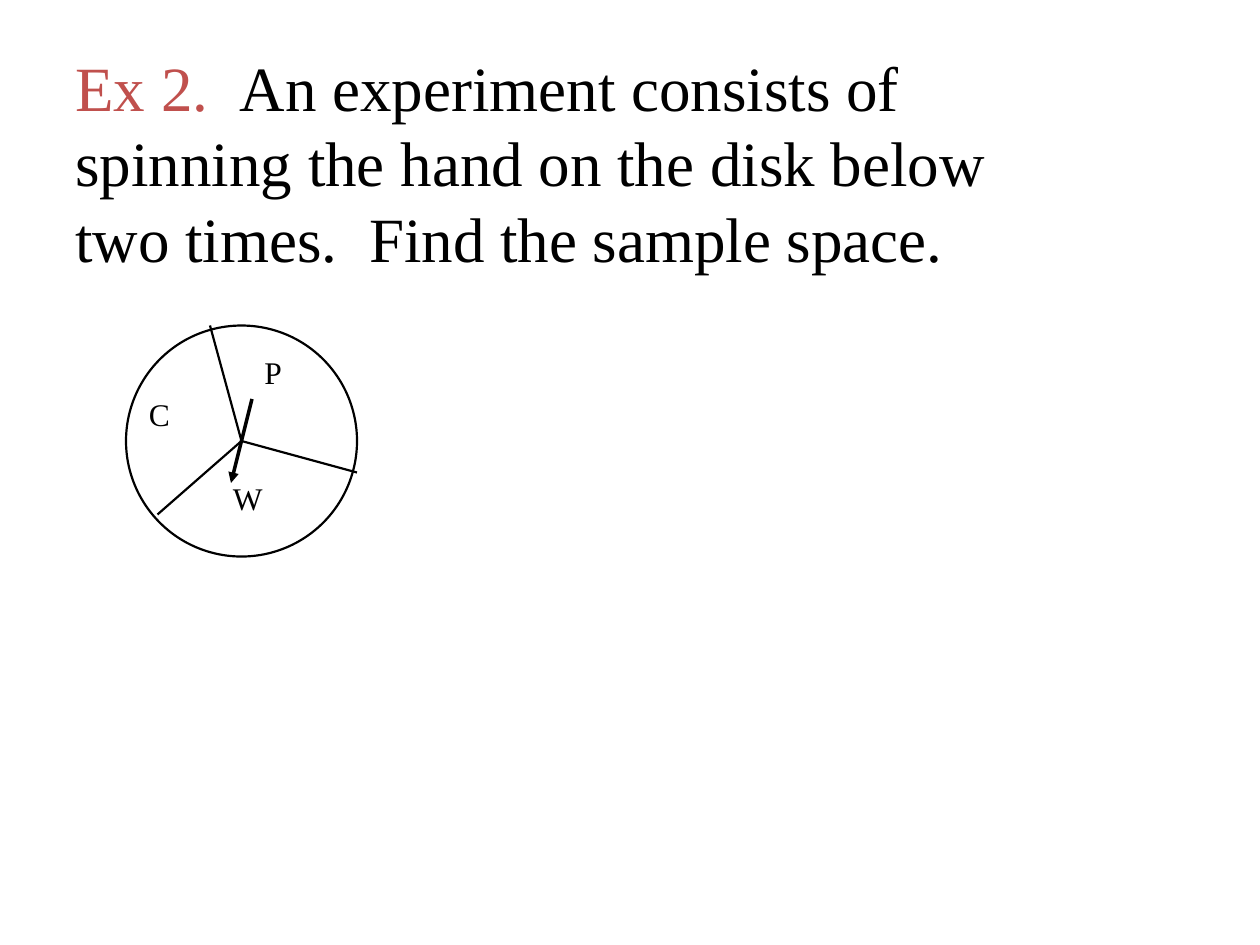
from typing import NamedTuple

from lxml import etree
from pptx import Presentation
from pptx.dml.color import RGBColor
from pptx.enum.shapes import MSO_CONNECTOR, MSO_SHAPE
from pptx.oxml.ns import qn
from pptx.util import Inches, Pt

STRAIGHT = MSO_CONNECTOR.STRAIGHT
OVAL = MSO_SHAPE.OVAL
FONT = "Times New Roman"
BLACK, RED = "000000", "C0504D"
CELLS_PER_INCH = 12  # grid of 120 columns by 90 rows


class Point(NamedTuple):
    column: float
    row: float


class Span(NamedTuple):
    text: str
    color: str = BLACK


class Label(NamedTuple):
    text: str
    corner: Point


CENTER = Point(23, 42)
RADIUS = 11
DIVIDER_ENDS = [Point(15, 49), Point(20, 31), Point(34, 45)]
HAND = (Point(24, 38), Point(22, 46))
LABELS = [Label("C", Point(13, 37)), Label("W", Point(21, 45)), Label("P", Point(24, 33))]
QUESTION = [
    Span("Ex 2.  ", RED),
    Span("An experiment consists of spinning the hand on the disk below "
         "two times.  Find the sample space."),
]


def cells(count: float) -> int:
    return Inches(count / CELLS_PER_INCH)


def rgb(color: str) -> RGBColor:
    return RGBColor.from_string(color)


def add_text(page, corner: Point, width: float, height: float,
             spans: list[Span], size: float) -> None:
    box = page.shapes.add_textbox(*map(cells, (*corner, width, height)))
    box.text_frame.word_wrap = True
    para = box.text_frame.paragraphs[0]
    para.font.name, para.font.size = FONT, Pt(size)
    for span in spans:
        run = para.add_run()
        run.text = span.text
        run.font.color.rgb = rgb(span.color)


def add_line(page, start: Point, end: Point, width: float, arrow: bool = False) -> None:
    connector = page.shapes.add_connector(STRAIGHT, *map(cells, (*start, *end)))
    connector.line.color.rgb = rgb(BLACK)
    connector.line.width = Pt(width)
    properties = connector._element.spPr
    if arrow:
        etree.SubElement(properties.find(qn("a:ln")), qn("a:tailEnd"), type="triangle")
    etree.SubElement(properties, qn("a:effectLst"))


def add_disk(page, center: Point, radius: float) -> None:
    disk = page.shapes.add_shape(OVAL, cells(center.column - radius), cells(center.row - radius),
                                 cells(2 * radius), cells(2 * radius))
    disk.shadow.inherit = False
    disk.fill.background()
    disk.line.color.rgb = rgb(BLACK)
    disk.line.width = Pt(1.25)


def main() -> None:
    deck = Presentation()
    deck.slide_width, deck.slide_height = Inches(10), Inches(7.5)
    page = deck.slides.add_slide(deck.slide_layouts[6])

    # Question
    add_text(page, Point(6, 4), 95, 23, QUESTION, 36)

    # Disk with its three sectors and the spinning hand
    add_disk(page, CENTER, RADIUS)
    for end in DIVIDER_ENDS:
        add_line(page, CENTER, end, 1.25)
    add_line(page, *HAND, 2, arrow=True)

    # Sector letters
    for label in LABELS:
        add_text(page, label.corner, 8, 6.84, [Span(label.text)], 18)

    deck.save("out.pptx")


if __name__ == "__main__":
    main()
